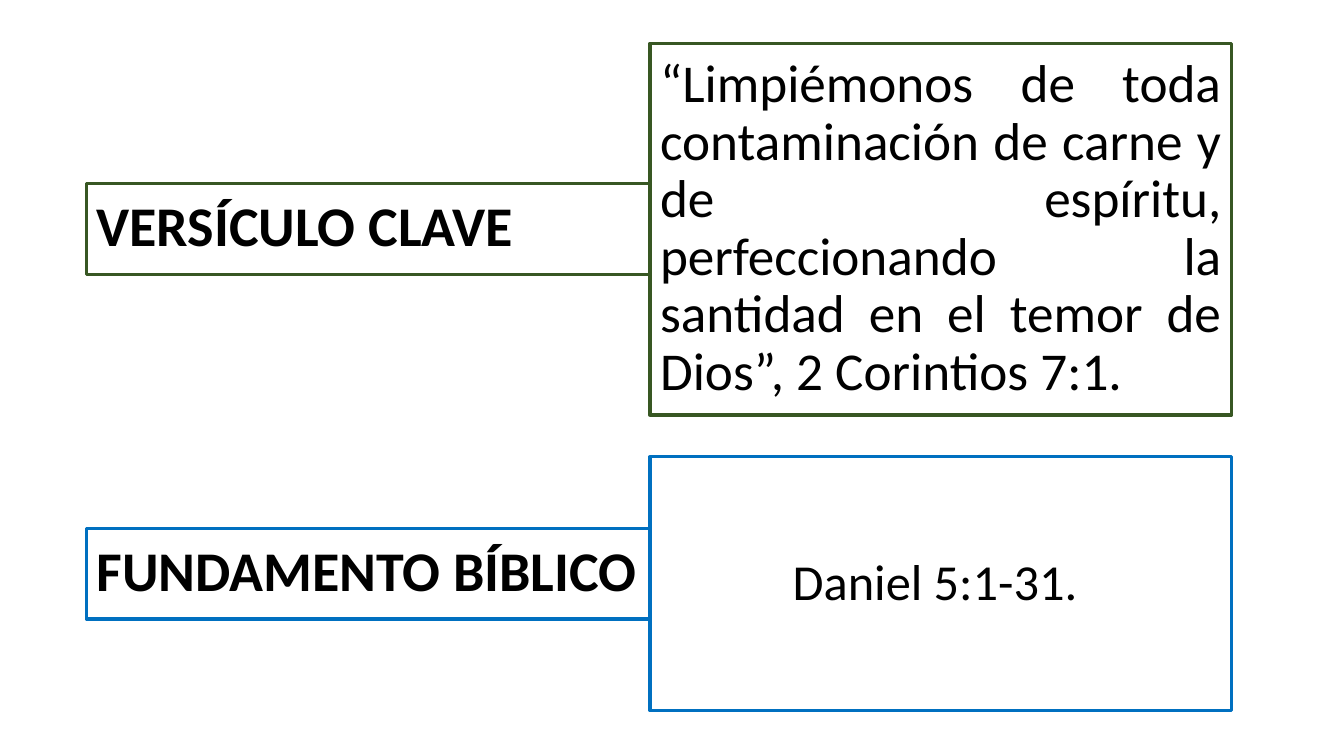
from lxml import etree
from pptx import Presentation
from pptx.dml.color import RGBColor
from pptx.enum import text as tx
from pptx.oxml import ns
from pptx.util import Cm, Pt

GREEN = RGBColor(0x38, 0x57, 0x23)
BLUE = RGBColor(0x00, 0x70, 0xC0)
BLACK = RGBColor(0, 0, 0)
LEFT, SPLIT, RIGHT = 2.18, 16.38, 31.04
TALL = 2.29


def fill(hold, box, words, size, hue, align, bold=False):
    hold.left, hold.top, hold.width, hold.height = [Cm(n) for n in box]
    hold.line.color.rgb = hue
    hold.line.width = Pt(2.25)
    frame = hold.text_frame
    frame.text = words
    frame.word_wrap = True
    frame.auto_size = tx.MSO_AUTO_SIZE.NONE
    frame.vertical_anchor = tx.MSO_ANCHOR.MIDDLE
    para = frame.paragraphs[0]
    props = para._p.get_or_add_pPr()
    props.set("marL", "0")
    props.set("indent", "0")
    etree.SubElement(props, ns.qn("a:buNone"))
    para.alignment = align
    para.line_spacing = 0.9
    para.space_before = Pt(0)
    font = para.runs[0].font
    font.name = "Calibri"
    font.size = Pt(size)
    font.bold = bold
    font.color.rgb = BLACK


def pair(label, body, box, drop, head, words, size, hue, align):
    left, top, width, height = box
    wide = SPLIT - left
    fill(label, (left, top + drop, wide, TALL), head, 40, hue,
         tx.PP_ALIGN.LEFT, True)
    fill(body, (SPLIT, top, width - wide, height), words, size, hue, align)


def main():
    deck = Presentation()
    deck.slide_width, deck.slide_height = Cm(33.87), Cm(19.05)
    slide = deck.slides.add_slide(deck.slide_layouts[4])
    title, *holds = slide.placeholders
    title._element.getparent().remove(title._element)
    wide = RIGHT - LEFT
    pair(holds[0], holds[1], (LEFT, 1.09, wide, 9.37), 3.53,
         "VERSÍCULO CLAVE",
         "“Limpiémonos de toda contaminación de carne y de espíritu, "
         "perfeccionando la santidad en el temor de Dios”, "
         "2 Corintios 7:1. ", 38, GREEN, tx.PP_ALIGN.JUSTIFY)
    pair(holds[2], holds[3], (LEFT, 11.51, wide, 6.4), 1.8,
         "FUNDAMENTO BÍBLICO", "Daniel 5:1-31. ", 36, BLUE,
         tx.PP_ALIGN.CENTER)
    deck.save("out.pptx")


if __name__ == "__main__":
    main()
